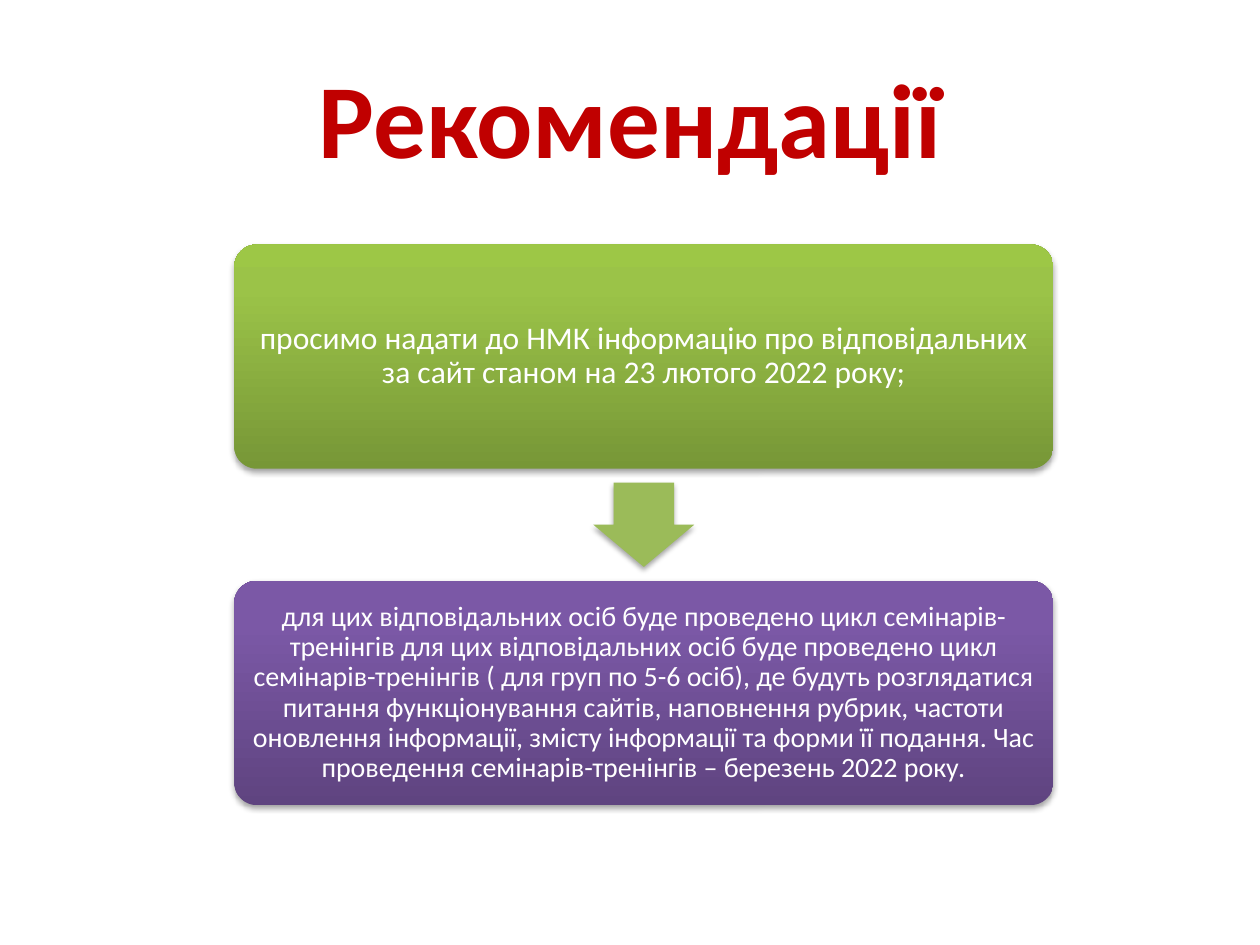
from copy import deepcopy

from lxml import etree
from pptx import Presentation
from pptx.dml.color import RGBColor
from pptx.enum import shapes, text
from pptx.oxml.ns import qn
from pptx.util import Inches, Pt

RED = RGBColor(0xC0, 0x00, 0x00)
WHITE = RGBColor(0xFF, 0xFF, 0xFF)
ARROW_GREEN = RGBColor(0x9B, 0xBB, 0x59)
GREENS = [RGBColor(0x77, 0x97, 0x37), RGBColor(0x9B, 0xC3, 0x48), RGBColor(0x9D, 0xC7, 0x46)]
PURPLES = [RGBColor(0x5F, 0x44, 0x80), RGBColor(0x7B, 0x58, 0xA6), RGBColor(0x7C, 0x57, 0xA8)]
STOP_POSITIONS = [0, 0.8, 1]

STEPS = [
    ("просимо надати до НМК інформацію про відповідальних за сайт станом на "
     "23 лютого 2022 року;", 18, GREENS),
    ("для цих відповідальних осіб буде проведено цикл семінарів-тренінгів "
     "для цих відповідальних осіб буде проведено цикл семінарів-тренінгів "
     "( для груп по 5-6 осіб), де будуть розглядатися питання функціонування "
     "сайтів, наповнення рубрик, частоти оновлення інформації, змісту "
     "інформації та форми її подання. Час проведення семінарів-тренінгів – "
     "березень 2022 року.", 16, PURPLES),
]


def write(shape, wording, size, color, bold=False):
    frame = shape.text_frame
    frame.word_wrap = True
    frame.vertical_anchor = text.MSO_ANCHOR.MIDDLE
    paragraph = frame.paragraphs[0]
    paragraph.text = wording
    paragraph.alignment = text.PP_ALIGN.CENTER
    font = paragraph.font
    font.name, font.size, font.bold = "Calibri", Pt(size), bold
    font.color.rgb = color
    return frame


def add_soft_shadow(shape):
    shape.shadow.inherit = False
    effects = shape._element.spPr.find(qn("a:effectLst"))
    shadow = etree.SubElement(effects, qn("a:outerShdw"), blurRad=str(Pt(3.1)),
                              dist=str(Pt(1.8)), dir="5400000", rotWithShape="0")
    color = etree.SubElement(shadow, qn("a:srgbClr"), val="000000")
    etree.SubElement(color, qn("a:alpha"), val="35000")


def fill_upward_gradient(shape, colors):
    fill = shape.fill
    fill.gradient()
    fill.gradient_angle = 90
    stop_list = shape._element.spPr.find(".//" + qn("a:gsLst"))
    stop_list.append(deepcopy(stop_list[-1]))
    for stop, position, color in zip(fill.gradient_stops, STOP_POSITIONS, colors):
        stop.position = position
        stop.color.rgb = color


def add_title(slide, left, top, width, height):
    title = slide.shapes.add_textbox(left, top, width, height)
    write(title, "Рекомендації", 60, RED, bold=True)


def add_step(slide, left, top, width, height, wording, size, colors):
    card = slide.shapes.add_shape(shapes.MSO_SHAPE.ROUNDED_RECTANGLE, left, top, width, height)
    card.adjustments[0] = 0.1
    fill_upward_gradient(card, colors)
    card.line.fill.background()
    add_soft_shadow(card)
    frame = write(card, wording, size, WHITE)
    frame.margin_left = frame.margin_right = Inches(0.07)
    frame.margin_top = frame.margin_bottom = Inches(0.07)
    frame.paragraphs[0].line_spacing = 0.9


def add_arrow(slide, left, top, width, height):
    arrow = slide.shapes.add_shape(shapes.MSO_SHAPE.DOWN_ARROW, left, top, width, height)
    arrow.adjustments[0] = 0.6
    arrow.adjustments[1] = 0.5
    arrow.fill.solid()
    arrow.fill.fore_color.rgb = ARROW_GREEN
    arrow.line.fill.background()
    add_soft_shadow(arrow)


def add_process(slide, left, top, width, height):
    """Stack the steps in the box, with an arrow centred in each gap."""
    gap = Inches(0.89)
    arrow_width, arrow_height = Inches(0.8), Inches(0.67)
    step_height = (height - gap * (len(STEPS) - 1)) // len(STEPS)
    for index, step in enumerate(STEPS):
        step_top = top + index * (step_height + gap)
        if index:
            add_arrow(slide, left + (width - arrow_width) // 2,
                      step_top - (gap + arrow_height) // 2, arrow_width, arrow_height)
        add_step(slide, left, step_top, width, step_height, *step)


def main():
    presentation = Presentation()
    presentation.slide_width, presentation.slide_height = Inches(10), Inches(7.5)
    slide = presentation.slides.add_slide(presentation.slide_layouts[6])
    add_title(slide, Inches(0.5), Inches(0.3), Inches(9), Inches(1.25))
    add_process(slide, Inches(1.86), Inches(1.94), Inches(6.5), Inches(4.45))
    presentation.save("out.pptx")


if __name__ == "__main__":
    main()
